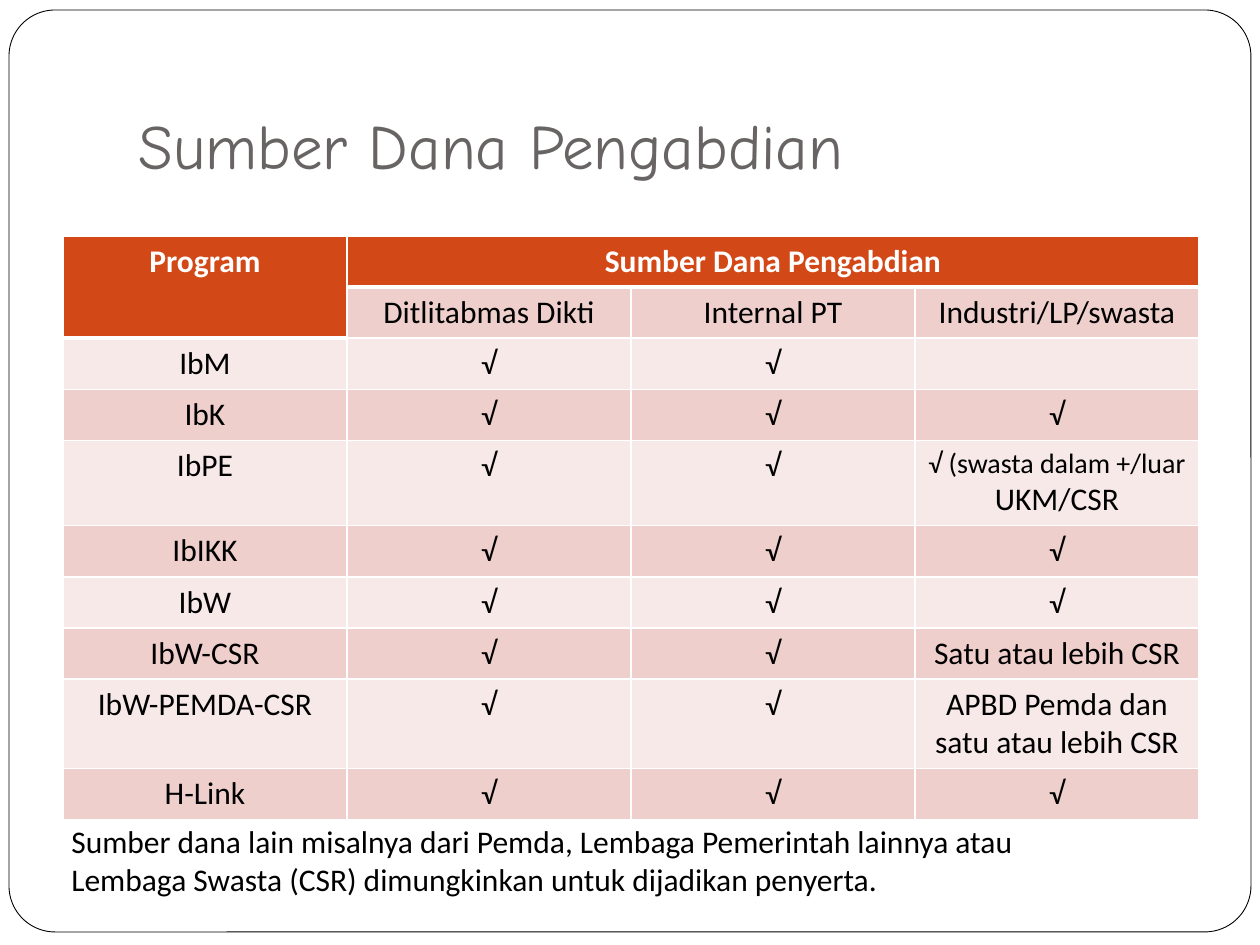
import pptx
import pptx.dml.color
import pptx.enum.shapes
import pptx.enum.text
import pptx.oxml
import pptx.oxml.ns
import pptx.util

RGBColor = pptx.dml.color.RGBColor
WHITE = RGBColor(0xFF, 0xFF, 0xFF)
BLACK = RGBColor(0x00, 0x00, 0x00)
GREY = RGBColor(0x69, 0x64, 0x64)
ORANGE = RGBColor(0xD3, 0x48, 0x17)
PINK = RGBColor(0xEF, 0xCF, 0xCC)
PALE_PINK = RGBColor(0xF7, 0xE9, 0xE8)

PIXELS_PER_INCH = 126
BODY_FONT = "Calibri"
TITLE_FONT = "Comic Neue"
CHECK = "√"

COLUMN_WIDTH = 284
ROW_HEIGHT = 51
SOURCES = ["Ditlitabmas Dikti", "Internal PT", "Industri/LP/swasta"]
# Each program with the (text, size) lines of its last column
PROGRAMS = [
    ("IbM", []),
    ("IbK", [(CHECK, 18)]),
    ("IbPE", [("√ (swasta dalam +/luar", 16), ("UKM/CSR", 18)]),
    ("IbIKK", [(CHECK, 18)]),
    ("IbW", [(CHECK, 18)]),
    ("IbW-CSR", [("Satu atau lebih CSR", 18)]),
    ("IbW-PEMDA-CSR", [("APBD Pemda dan satu atau lebih CSR", 18)]),
    ("H-Link", [(CHECK, 18)]),
]


def px(length):
    return pptx.util.Emu(round(length * 914400 / PIXELS_PER_INCH))


def box(left, top, width, height):
    return [px(length) for length in (left, top, width, height)]


def add_run(paragraph, text, size, color, font=BODY_FONT, bold=False):
    run = paragraph.add_run()
    run.text = text
    run.font.name = font
    run.font.size = pptx.util.Pt(size)
    run.font.bold = bold
    run.font.color.rgb = color


def add_frame(slide):
    shape = slide.shapes.add_shape(
        pptx.enum.shapes.MSO_SHAPE.ROUNDED_RECTANGLE, *box(9, 10, 1242, 922))
    shape.adjustments[0] = 0.05
    shape.shadow.inherit = False
    shape.fill.solid()
    shape.fill.fore_color.rgb = WHITE
    shape.line.color.rgb = BLACK
    shape.line.width = pptx.util.Pt(0.5)
    # Keep the frame behind the title
    slide.shapes.title.element.addprevious(shape.element)


def fill_title(slide, text):
    title = slide.shapes.title
    title.left, title.top, title.width, title.height = box(126, 38, 1071, 157)
    text_frame = title.text_frame
    text_frame.auto_size = pptx.enum.text.MSO_AUTO_SIZE.NONE
    text_frame.vertical_anchor = pptx.enum.text.MSO_ANCHOR.BOTTOM
    text_frame.margin_bottom = pptx.util.Inches(0.1)
    paragraph = text_frame.paragraphs[0]
    paragraph.alignment = pptx.enum.text.PP_ALIGN.LEFT
    add_run(paragraph, text, 36, GREY, TITLE_FONT)


def set_borders(cell, bottom_points):
    properties = cell._tc.get_or_add_tcPr()
    namespace = pptx.oxml.ns.nsdecls("a")
    widths = [("lnL", 1), ("lnR", 1), ("lnT", 1), ("lnB", bottom_points)]
    for index, (side, points) in enumerate(widths):
        border = pptx.oxml.parse_xml(
            f'<a:{side} {namespace} w="{pptx.util.Pt(points)}"><a:solidFill>'
            f'<a:srgbClr val="{WHITE}"/></a:solidFill></a:{side}>')
        properties.insert(index, border)


def fill_cell(cell, lines, fill, header=False):
    cell.fill.solid()
    cell.fill.fore_color.rgb = fill
    set_borders(cell, 3 if header else 1)
    text_frame = cell.text_frame
    for index, (text, size) in enumerate(lines):
        paragraph = text_frame.add_paragraph() if index else text_frame.paragraphs[0]
        paragraph.alignment = pptx.enum.text.PP_ALIGN.CENTER
        add_run(paragraph, text, size, WHITE if header else BLACK, bold=header)


def add_funding_table(slide):
    row_count, column_count = len(PROGRAMS) + 2, len(SOURCES) + 1
    graphic_frame = slide.shapes.add_table(
        row_count, column_count,
        *box(63, 236, COLUMN_WIDTH * column_count, ROW_HEIGHT * row_count))
    table = graphic_frame.table
    for column in table.columns:
        column.width = px(COLUMN_WIDTH)
    for row in table.rows:
        row.height = px(ROW_HEIGHT)

    # Header: one cell two rows tall, one cell across all sources
    table.cell(0, 0).merge(table.cell(1, 0))
    table.cell(0, 1).merge(table.cell(0, column_count - 1))
    for row in range(2):
        for column in range(column_count):
            if row == 0 or column == 0:
                fill_cell(table.cell(row, column), [], ORANGE, header=True)
    for column, text in enumerate(["Program", "Sumber Dana Pengabdian"]):
        paragraph = table.cell(0, column).text_frame.paragraphs[0]
        paragraph.alignment = pptx.enum.text.PP_ALIGN.CENTER
        add_run(paragraph, text, 18, WHITE, bold=True)
    for column, source in enumerate(SOURCES, start=1):
        fill_cell(table.cell(1, column), [(source, 18)], PINK)

    # Programs, in alternating bands
    for row, (program, last_lines) in enumerate(PROGRAMS, start=2):
        fill = PINK if row % 2 else PALE_PINK
        check = [(CHECK, 18)]
        for column, lines in enumerate([[(program, 18)], check, check, last_lines]):
            fill_cell(table.cell(row, column), lines, fill)


def add_note(slide, text):
    shape = slide.shapes.add_textbox(*box(59, 816, 1033, 89))
    shape.text_frame.word_wrap = True
    add_run(shape.text_frame.paragraphs[0], text, 18, BLACK)


def main():
    presentation = pptx.Presentation()
    presentation.slide_width = px(1260)
    presentation.slide_height = px(945)
    slide = presentation.slides.add_slide(presentation.slide_layouts[5])

    add_frame(slide)
    fill_title(slide, "Sumber Dana Pengabdian")
    add_funding_table(slide)
    add_note(slide, "Sumber dana lain misalnya dari Pemda, Lembaga Pemerintah "
                    "lainnya atau Lembaga Swasta (CSR) dimungkinkan untuk "
                    "dijadikan penyerta.")
    presentation.save("out.pptx")


if __name__ == "__main__":
    main()
